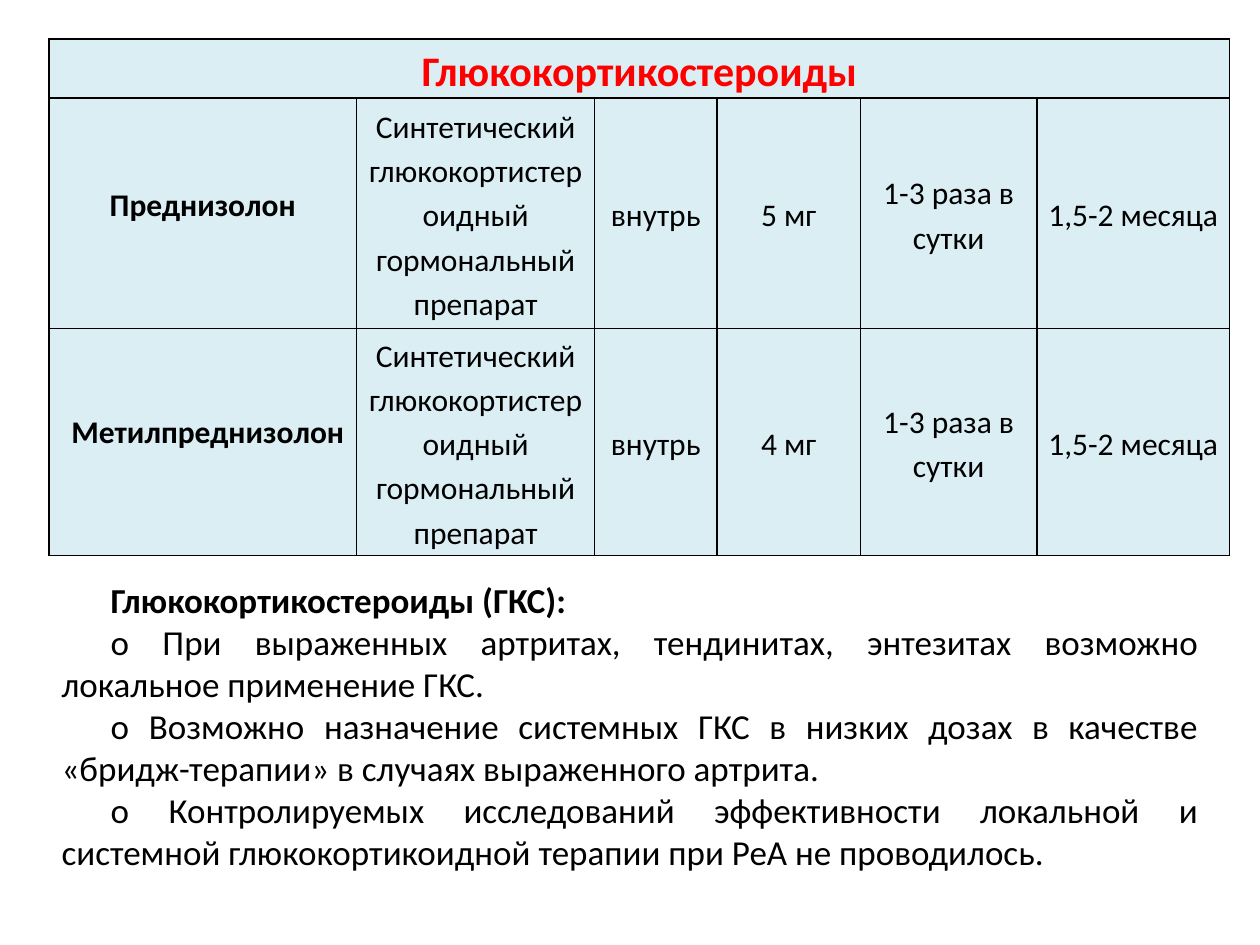
from dataclasses import dataclass

from lxml import etree
from pptx import Presentation
from pptx import util as u
from pptx.dml.color import RGBColor
from pptx.enum import text
from pptx.oxml import ns


@dataclass(frozen=True)
class Theme:
    """Colours, font and type sizes."""
    font: str = "Calibri"
    ink: str = "000000"
    accent: str = "FF0000"
    panel: str = "DBEEF4"
    heading: int = 24
    table: int = 18
    body: int = 20
    border: int = 1
    leading: float = 1.15


class Board:
    """Places styled elements on a slide grid of 100 columns by 75 rows."""

    def __init__(self, slide, theme, size):
        self.slide = slide
        self.theme = theme
        self.column = size[0] / 100
        self.row = size[1] / 75

    def box(self, left, top, width, height):
        """Turn grid units into lengths."""
        return (u.Emu(round(left * self.column)), u.Emu(round(top * self.row)),
                u.Emu(round(width * self.column)), u.Emu(round(height * self.row)))

    def paragraph(self, target, words, size, color, bold, align, leading=None, margin=0, indent=0):
        """Write one styled paragraph."""
        target.text = words
        target.alignment = align
        target.line_spacing = leading
        properties = target._p.get_or_add_pPr()
        properties.set("marL", str(u.Inches(margin)))
        properties.set("indent", str(u.Inches(indent)))
        for run in target.runs:
            run.font.name = self.theme.font
            run.font.size = u.Pt(size)
            run.font.bold = bold
            run.font.color.rgb = RGBColor.from_string(color)

    def frame_cell(self, cell):
        """Give a cell its borders, fill and margins."""
        properties = cell._tc.get_or_add_tcPr()
        for side in ("a:lnL", "a:lnR", "a:lnT", "a:lnB"):
            line = etree.SubElement(properties, ns.qn(side), w=str(u.Pt(self.theme.border)))
            paint = etree.SubElement(line, ns.qn("a:solidFill"))
            etree.SubElement(paint, ns.qn("a:srgbClr"), val=self.theme.ink)
        cell.fill.solid()
        cell.fill.fore_color.rgb = RGBColor.from_string(self.theme.panel)
        cell.margin_left = cell.margin_right = u.Inches(0.06)
        cell.margin_top = cell.margin_bottom = 0
        cell.vertical_anchor = text.MSO_ANCHOR.MIDDLE

    def drug_table(self, left, top, widths, heights, heading, drugs):
        """Draw a table with a merged heading and one row per drug."""
        area = self.box(left, top, sum(widths), sum(heights))
        table = self.slide.shapes.add_table(len(heights), len(widths), *area).table
        table.first_row = table.horz_banding = False
        for column, width in zip(table.columns, widths):
            column.width = u.Emu(round(width * self.column))
        for row, height in zip(table.rows, heights):
            row.height = u.Emu(round(height * self.row))
        for cell in table.iter_cells():
            self.frame_cell(cell)

        style, center = self.theme, text.PP_ALIGN.CENTER
        title = table.cell(0, 0)
        title.merge(table.cell(0, len(widths) - 1))
        title.vertical_anchor = text.MSO_ANCHOR.BOTTOM
        self.paragraph(title.text_frame.paragraphs[0], heading, style.heading, style.accent,
                       True, center, style.leading)
        for r, (name, name_leading, name_margin, *details) in enumerate(drugs, 1):
            self.paragraph(table.cell(r, 0).text_frame.paragraphs[0], name, style.table,
                           style.ink, True, center, u.Pt(name_leading), name_margin)
            for c, detail in enumerate(details, 1):
                self.paragraph(table.cell(r, c).text_frame.paragraphs[0], detail, style.table,
                               style.ink, False, center, style.leading)

    def guidance(self, area, heading, points):
        """Draw a bold heading followed by justified points."""
        frame = self.slide.shapes.add_textbox(*self.box(*area)).text_frame
        frame.word_wrap = True
        frame.auto_size = text.MSO_AUTO_SIZE.SHAPE_TO_FIT_TEXT
        frame.vertical_anchor = text.MSO_ANCHOR.MIDDLE
        lines = [heading, *points]
        frame.text = "\n".join(lines)
        for i, (target, words) in enumerate(zip(frame.paragraphs, lines)):
            self.paragraph(target, words, self.theme.body, self.theme.ink, i == 0,
                           text.PP_ALIGN.JUSTIFY, indent=0.39)


def main():
    """Build and save the slide."""
    deck = Presentation()
    deck.slide_width, deck.slide_height = u.Inches(10), u.Inches(7.5)
    slide = deck.slides.add_slide(deck.slide_layouts[6])
    board = Board(slide, Theme(), (deck.slide_width, deck.slide_height))

    action = "Синтетический глюкокортистероидный гормональный препарат"
    frequency, duration = "1-3 раза в сутки", "1,5-2 месяца"
    drugs = [
        ("Преднизолон", 13.7, 0, action, "внутрь", "5 мг", frequency, duration),
        ("Метилпреднизолон", 11.8, 0.08, action, "внутрь", "4 мг", frequency, duration),
    ]
    board.drug_table(3.9, 3.1, [24.4, 18.9, 9.7, 11.4, 14, 15.3], [4, 18.3, 18],
                     "Глюкокортикостероиды", drugs)
    board.guidance((3.9, 45.3, 92.2, 24.6), "Глюкокортикостероиды (ГКС):", [
        "o При выраженных артритах, тендинитах, энтезитах возможно локальное применение ГКС.",
        "o Возможно назначение системных ГКС в низких дозах в качестве «бридж-терапии» "
        "в случаях выраженного артрита.",
        "o Контролируемых исследований эффективности локальной и системной "
        "глюкокортикоидной терапии при РеА не проводилось.",
    ])
    deck.save("out.pptx")


if __name__ == "__main__":
    main()
